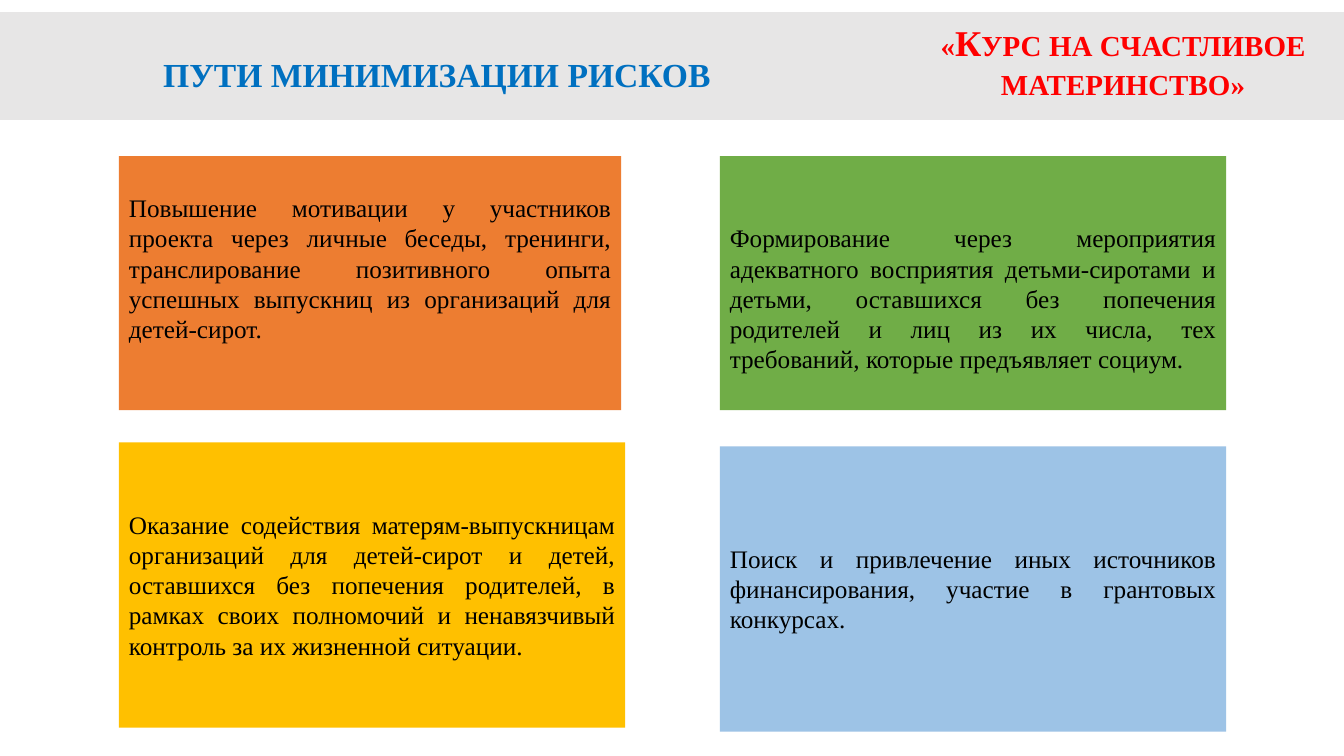
from pptx import Presentation
from pptx.dml.color import RGBColor
from pptx.enum.shapes import MSO_SHAPE as Shape
from pptx.enum.text import MSO_ANCHOR as Anchor, PP_ALIGN as Align
from pptx.util import Inches, Pt

FONT = "Times New Roman"
GRAY = RGBColor(0xE7, 0xE6, 0xE6)
BLUE = RGBColor(0x00, 0x70, 0xC0)
RED = RGBColor(0xFF, 0x00, 0x00)
BLACK = RGBColor(0x00, 0x00, 0x00)
ORANGE = RGBColor(0xED, 0x7D, 0x31)
YELLOW = RGBColor(0xFF, 0xC0, 0x00)
GREEN = RGBColor(0x70, 0xAD, 0x47)
LIGHT_BLUE = RGBColor(0x9D, 0xC3, 0xE6)

deck = Presentation()
deck.slide_width, deck.slide_height = Inches(13.33), Inches(7.5)
page = deck.slides.add_slide(deck.slide_layouts[6])


def add_rectangle(left, top, width, height, color):
    box = page.shapes.add_shape(
        Shape.RECTANGLE, Inches(left), Inches(top), Inches(width), Inches(height))
    box.shadow.inherit = False
    box.fill.solid()
    box.fill.fore_color.rgb = color
    box.line.fill.background()
    return box


def write(box, text, size, color, align, bold=False):
    para = box.text_frame.paragraphs[0]
    para.alignment = align
    para.font.name = FONT
    para.font.size = Pt(size)
    para.font.bold = bold
    para.font.color.rgb = color
    span = para.add_run()
    span.text = text
    return para, span


# Header band and slide title
band = add_rectangle(0, 0.13, 13.33, 1.05, GRAY)
band.line.color.rgb = GRAY
band.line.width = Pt(1)

title = page.shapes.add_textbox(Inches(1.52), Inches(0.49), Inches(5.68), Inches(0.5))
title.text_frame.word_wrap = False
write(title, "ПУТИ МИНИМИЗАЦИИ РИСКОВ", 24, BLUE, Align.LEFT, bold=True)

# Four measures: left, top, width, height, space above the text, colour, text
measures = [
    (1.18, 1.55, 4.98, 2.52, 0.36, ORANGE,
     "Повышение мотивации у участников проекта через личные беседы, тренинги, "
     "транслирование позитивного опыта успешных выпускниц из организаций для "
     "детей-сирот."),
    (1.18, 4.39, 5.02, 2.83, 0.66, YELLOW,
     "Оказание содействия матерям-выпускницам организаций для детей-сирот и детей, "
     "оставшихся без попечения родителей, в рамках своих полномочий и ненавязчивый "
     "контроль за их жизненной ситуации."),
    (7.14, 1.55, 5.02, 2.52, 0.66, GREEN,
     "Формирование через мероприятия адекватного восприятия детьми-сиротами и "
     "детьми, оставшихся без попечения родителей и лиц из их числа, тех требований, "
     "которые предъявляет социум."),
    (7.14, 4.43, 5.02, 2.83, 0.96, LIGHT_BLUE,
     "Поиск и привлечение иных источников финансирования, участие в грантовых "
     "конкурсах."),
]
for left, top, width, height, space_above, color, text in measures:
    box = add_rectangle(left, top, width, height, color)
    frame = box.text_frame
    frame.word_wrap = True
    frame.vertical_anchor = Anchor.TOP
    frame.margin_top = Inches(space_above)
    write(box, text, 18, BLACK, Align.JUSTIFY)

# Project name in small capitals
project = page.shapes.add_textbox(Inches(9.12), Inches(0.2), Inches(4.04), Inches(1.08))
project.text_frame.word_wrap = True
para, span = write(project, "«Курс на счастливое материнство»", 25.9, RED, Align.CENTER, bold=True)
para.line_spacing = 0.9
span._r.get_or_add_rPr().set("cap", "small")

deck.save("out.pptx")
